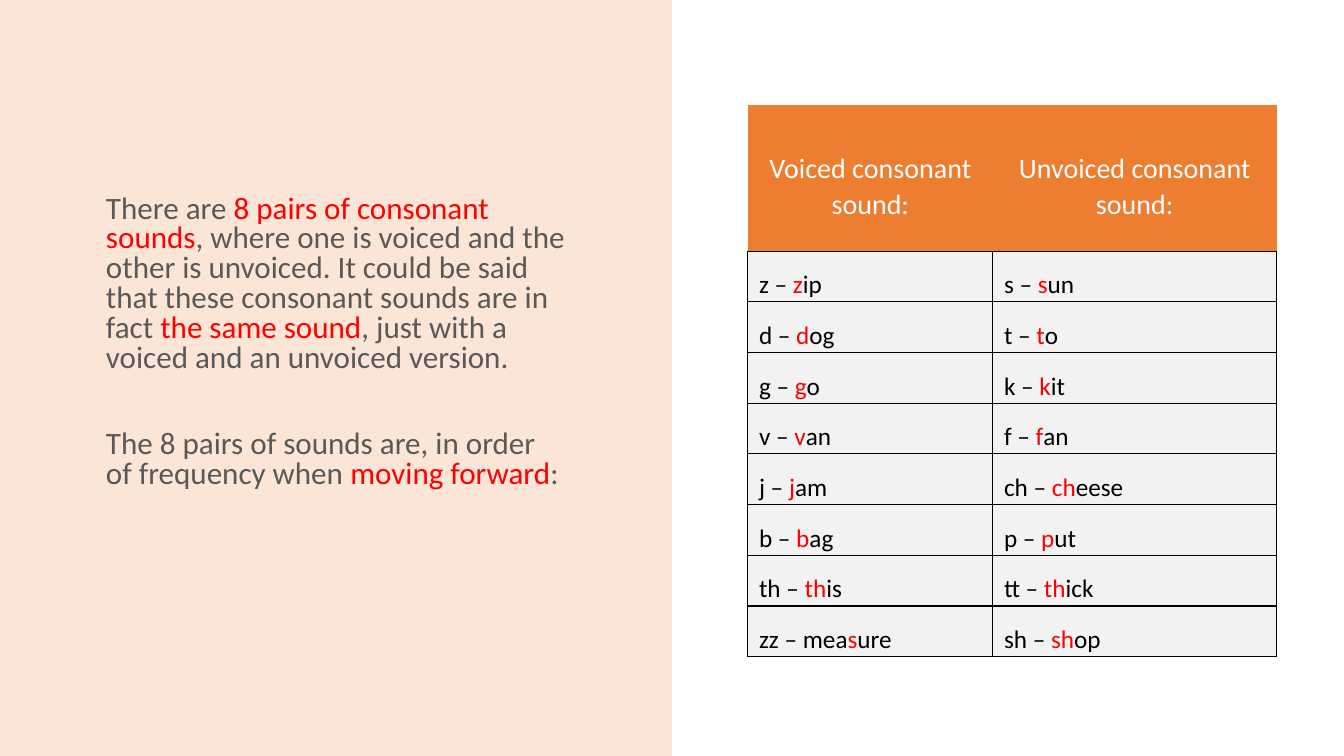
from lxml import etree
from pptx import Presentation
from pptx.dml.color import RGBColor
from pptx.enum.shapes import MSO_SHAPE
from pptx.enum.text import MSO_ANCHOR, MSO_AUTO_SIZE, PP_ALIGN
from pptx.oxml.ns import qn
from pptx.util import Pt

RECT = MSO_SHAPE.RECTANGLE
TOP, MIDDLE = MSO_ANCHOR.TOP, MSO_ANCHOR.MIDDLE
LEFT, CENTER = PP_ALIGN.LEFT, PP_ALIGN.CENTER
NO_FIT = MSO_AUTO_SIZE.NONE

FONT = "Calibri"
COLORS = {
    "panel": "FBE5D6",
    "header": "ED7D31",
    "cell": "F2F2F2",
    "grey": "595959",
    "red": "FF0000",
    "black": "000000",
    "white": "FFFFFF",
}

INTRO = [
    "There are *8 pairs of consonant sounds*, where one is voiced and the other "
    "is unvoiced. It could be said that these consonant sounds are in fact "
    "*the same sound*, just with a voiced and an unvoiced version.",
    "The 8 pairs of sounds are, in order of frequency when *moving forward*:",
]
HEADERS = ("Voiced consonant sound:", "Unvoiced consonant sound:")
PAIRS = [
    ("z – *z*ip", "s – *s*un"),
    ("d – *d*og", "t – *t*o"),
    ("g – *g*o", "k – *k*it"),
    ("v – *v*an", "f – *f*an"),
    ("j – *j*am", "ch – *ch*eese"),
    ("b – *b*ag", "p – *p*ut"),
    ("th – *th*is", "tt – *th*ick"),
    ("zz – mea*s*ure", "sh – *sh*op"),
]


def rgb(name):
    return RGBColor.from_string(COLORS[name])


def write(p, text, size, color, align=LEFT, spacing=1.0, before=0):
    """Fill a paragraph; parts between asterisks are red."""
    p.alignment = align
    p.line_spacing = spacing
    p.space_before = Pt(before)
    for i, part in enumerate(text.split("*")):
        if part:
            r = p.add_run()
            r.text = part
            r.font.name = FONT
            r.font.size = Pt(size)
            r.font.color.rgb = rgb("red" if i % 2 else color)


def set_borders(cell, black_sides):
    tcPr = cell._tc.get_or_add_tcPr()
    for side in "LRTB":
        ln = etree.SubElement(tcPr, qn(f"a:ln{side}"), w=str(Pt(1)))
        if side in black_sides:
            fill = etree.SubElement(ln, qn("a:solidFill"))
            etree.SubElement(fill, qn("a:srgbClr"), val=COLORS["black"])
        else:
            etree.SubElement(ln, qn("a:noFill"))


def add_panel(s, x, y, w, h):
    sp = s.shapes.add_shape(RECT, Pt(x), Pt(y), Pt(w), Pt(h))
    sp.shadow.inherit = False
    sp.fill.solid()
    sp.fill.fore_color.rgb = rgb("panel")
    sp.line.fill.background()
    # the panel lies behind the body placeholder
    s.shapes._spTree.insert(2, sp._element)


def add_intro(s, x, y, w, h):
    sp = s.placeholders[1]
    sp.left, sp.top, sp.width, sp.height = Pt(x), Pt(y), Pt(w), Pt(h)
    tf = sp.text_frame
    tf.word_wrap = True
    tf.auto_size = NO_FIT
    tf.vertical_anchor = TOP
    tf.margin_left, tf.margin_right = Pt(7.2), Pt(6)
    tf.margin_top, tf.margin_bottom = Pt(64.4), Pt(0)
    for i, text in enumerate(INTRO):
        p = tf.add_paragraph() if i else tf.paragraphs[0]
        write(p, text, 22.2, "grey", spacing=0.8, before=40.5 if i else 0)
        pPr = p._p.get_or_add_pPr()
        pPr.set("marL", "0")
        pPr.set("indent", "0")
        etree.SubElement(pPr, qn("a:buNone"))


def add_sound_table(s, x, y, w, h):
    rows = [HEADERS] + PAIRS
    frame = s.shapes.add_table(len(rows), 2, Pt(x), Pt(y), Pt(w), Pt(h))
    table = frame.table
    table.first_row = table.horz_banding = False
    voiced_w, header_h = 175, 104.4
    table.columns[0].width = Pt(voiced_w)
    table.columns[1].width = Pt(w - voiced_w)
    for i, texts in enumerate(rows):
        head = i == 0
        table.rows[i].height = Pt(header_h if head else (h - header_h) / len(PAIRS))
        for j, text in enumerate(texts):
            cell = table.cell(i, j)
            set_borders(cell, "B" if head else "LRTB")
            cell.fill.solid()
            cell.fill.fore_color.rgb = rgb("header" if head else "cell")
            cell.vertical_anchor = MIDDLE
            cell.margin_left = cell.margin_right = Pt(8)
            cell.margin_top, cell.margin_bottom = Pt(10.8), Pt(0)
            write(cell.text_frame.paragraphs[0], text, 20 if head else 18,
                  "white" if head else "black",
                  align=CENTER if head else LEFT, spacing=1.07)


def main():
    prs = Presentation()
    prs.slide_width, prs.slide_height = Pt(960), Pt(540)
    s = prs.slides.add_slide(prs.slide_layouts[1])
    title = s.shapes.title._element
    title.getparent().remove(title)
    add_panel(s, 0, 0, 480, 540)
    add_intro(s, 68.5, 75, 342.7, 296.6)
    add_sound_table(s, 534.2, 75, 377.7, 394)
    prs.save("out.pptx")


if __name__ == "__main__":
    main()
